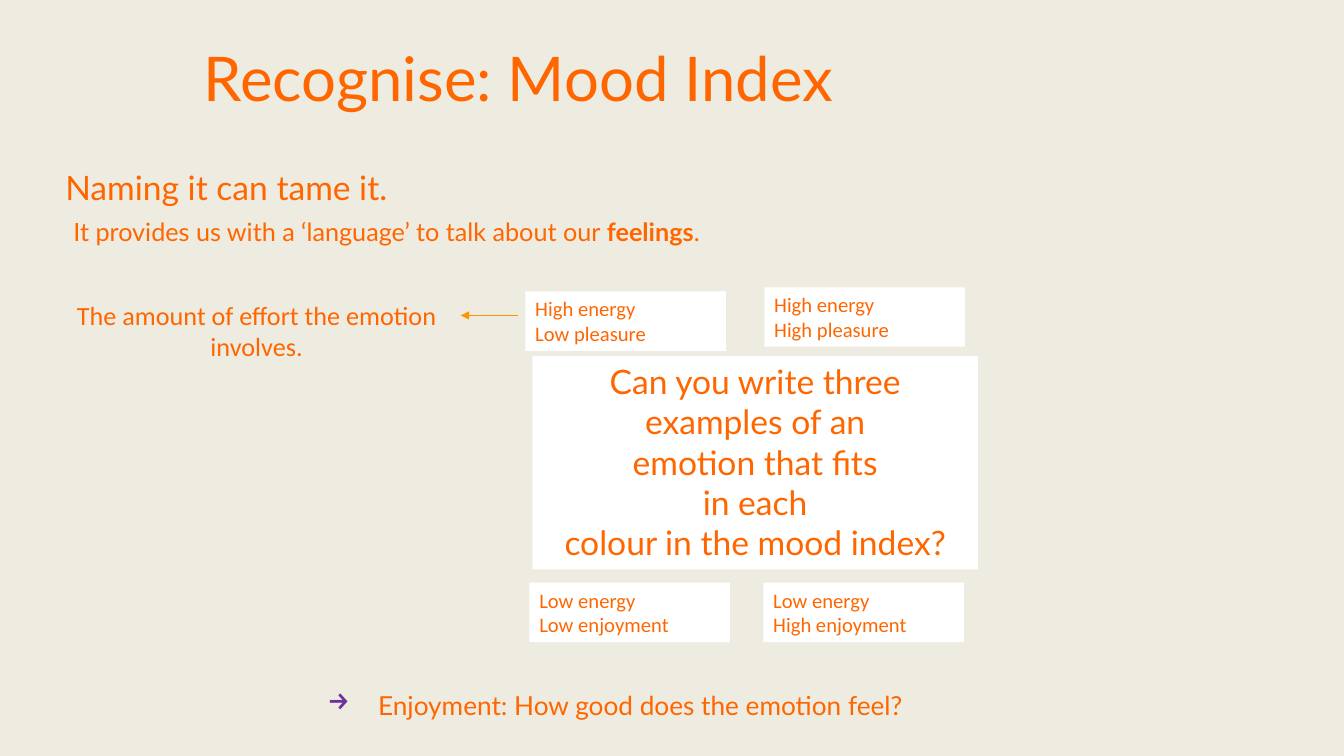
from lxml import etree
from pptx import Presentation
from pptx.dml.color import RGBColor
from pptx.enum.shapes import MSO_CONNECTOR, MSO_SHAPE
from pptx.enum.text import MSO_ANCHOR, PP_ALIGN
from pptx.oxml.ns import qn
from pptx.util import Inches, Pt

LEFT, CENTER, RIGHT = PP_ALIGN.LEFT, PP_ALIGN.CENTER, PP_ALIGN.RIGHT
TOP, MIDDLE = MSO_ANCHOR.TOP, MSO_ANCHOR.MIDDLE
RECT, STRAIGHT = MSO_SHAPE.RECTANGLE, MSO_CONNECTOR.STRAIGHT
COLORS = {"bg": "EEECE1", "text": "FF6600", "box": "FFFFFF",
          "arrow": "FD9401", "bullet": "7030A0"}


def rgb(name):
    return RGBColor.from_string(COLORS[name])


class MoodSlide:
    def __init__(self, prs):
        self.s = prs.slides.add_slide(prs.slide_layouts[6])
        self.s.background.fill.solid()
        self.s.background.fill.fore_color.rgb = rgb("bg")

    def paragraphs(self, tf, lines, size, font, align=LEFT, anchor=TOP, **paragraph_format):
        tf.word_wrap = True
        tf.vertical_anchor = anchor
        for i, line in enumerate(lines):
            p = tf.paragraphs[0] if i == 0 else tf.add_paragraph()
            for name, value in {"alignment": align, **paragraph_format}.items():
                setattr(p, name, value)
            self.run(p, line, size, font)
        return tf

    def run(self, p, text, size, font, bold=False):
        r = p.add_run()
        r.text = text
        for name, value in {"size": Pt(size), "name": font, "bold": bold}.items():
            setattr(r.font, name, value)
        r.font.color.rgb = rgb("text")

    def text(self, box, lines, size, font, **options):
        sp = self.s.shapes.add_textbox(*map(Inches, box))
        return self.paragraphs(sp.text_frame, lines, size, font, **options)

    def card(self, box, lines, size, font, **options):
        sp = self.s.shapes.add_shape(RECT, *map(Inches, box))
        sp.shadow.inherit = False
        sp.fill.solid()
        sp.fill.fore_color.rgb = rgb("box")
        sp.line.fill.background()
        self.paragraphs(sp.text_frame, lines, size, font, **options)

    def arrow(self, *ends):
        connector = self.s.shapes.add_connector(STRAIGHT, *map(Inches, ends))
        connector.line.color.rgb = rgb("arrow")
        connector.line.width = Pt(0.5)
        spPr = connector._element.spPr
        etree.SubElement(spPr.find(qn("a:ln")), qn("a:tailEnd"), type="triangle")
        etree.SubElement(spPr, qn("a:effectLst"))

    def bullet(self, p, char, indent):
        pPr = p._p.get_or_add_pPr()
        pPr.set("marL", str(Inches(indent)))
        pPr.set("indent", str(-Inches(indent)))
        color = etree.SubElement(pPr, qn("a:buClr"))
        etree.SubElement(color, qn("a:srgbClr"), val=COLORS["bullet"])
        etree.SubElement(pPr, qn("a:buSzPct"), val="108000")
        etree.SubElement(pPr, qn("a:buChar"), char=char)


def main():
    prs = Presentation()
    prs.slide_width, prs.slide_height = Inches(13.33), Inches(7.5)
    slide = MoodSlide(prs)

    slide.text((1.92, 0.08, 10.35, 1.45), ["Recognise: Mood Index"], 44, "Lato",
               anchor=MIDDLE, line_spacing=0.9)

    intro = slide.text((0.55, 1.61, 10.84, 1.72), ["Naming it can tame it."], 24, "Lato")
    p = intro.add_paragraph()
    p.space_before = Pt(6)
    p._p.get_or_add_pPr().set("marL", str(Inches(0.08)))
    for text, bold in (("It provides us with a ‘language’ to talk about our ", False),
                       ("feelings", True), (".", False)):
        slide.run(p, text, 18, "Lato", bold)

    enjoyment = slide.text((2.3, 6.79, 6.75, 0.42),
                           ["Enjoyment: How good does the emotion feel?"],
                           18.7, "Lato", align=RIGHT)
    slide.bullet(enjoyment.paragraphs[0], "→", 0.5)

    for left, top, energy, feeling in ((5.21, 2.89, "High", "Low pleasure"),
                                       (5.25, 5.78, "Low", "Low enjoyment"),
                                       (7.58, 2.85, "High", "High pleasure"),
                                       (7.57, 5.78, "Low", "High enjoyment")):
        slide.card((left, top, 1.99, 0.59), [f"{energy} energy", feeling], 14.7, "Calibri")

    slide.text((-0.05, 2.92, 5.19, 0.73),
               ["The amount of effort the emotion", "involves."],
               18.7, "Calibri", align=CENTER)
    slide.arrow(5.14, 3.13, 4.57, 3.13)

    slide.card((5.28, 3.53, 4.42, 2.12),
               ["Can you write three", "examples of an", "emotion that fits",
                "in each", "colour in the mood index?"],
               24, "Lato", align=CENTER)
    prs.save("out.pptx")


if __name__ == "__main__":
    main()
